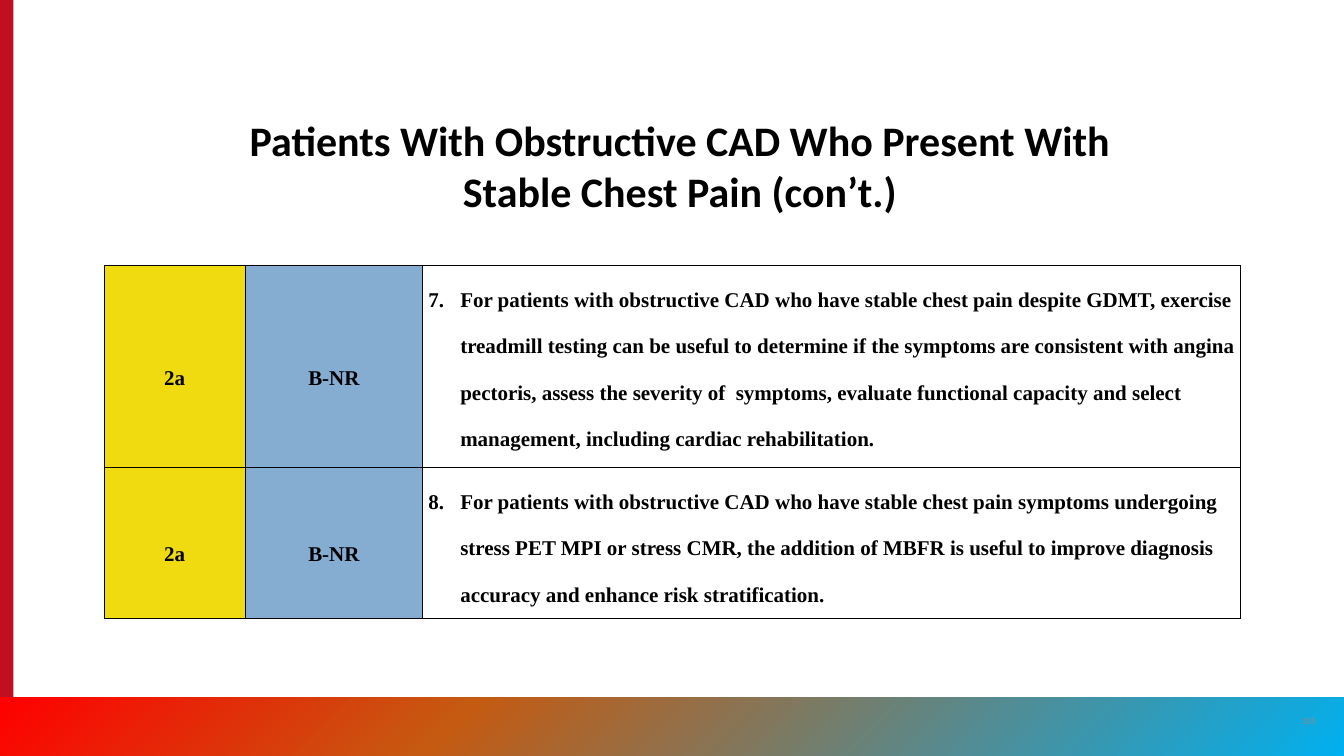
import copy

import pptx
import pptx.dml.color
import pptx.enum.shapes
import pptx.enum.text
import pptx.oxml
import pptx.oxml.ns
import pptx.util

COLS, ROWS = 16, 9
HUES = {
    "ink": "000000", "grey": "8A8B8A", "side": "C10E21",
    "class": "F0DA10", "level": "85ADD1",
    "sky": "00B0F0", "rust": "C55A11", "red": "FF0000",
}
FONTS = {
    "title": {"name": "Calibri", "size": pptx.util.Pt(36), "bold": True},
    "page": {"name": "Calibri", "size": pptx.util.Pt(8), "bold": False},
    "cell": {"name": "Times New Roman", "size": pptx.util.Pt(18), "bold": True},
}
ADVICE = [
    ("2a", "B-NR", 7, "For patients with obstructive CAD who have stable chest pain despite GDMT, "
     "exercise treadmill testing can be useful to determine if the symptoms are consistent with "
     "angina pectoris, assess the severity of  symptoms, evaluate functional capacity and select "
     "management, including cardiac rehabilitation."),
    ("2a", "B-NR", 8, "For patients with obstructive CAD who have stable chest pain symptoms "
     "undergoing stress PET MPI or stress CMR, the addition of MBFR is useful to improve "
     "diagnosis accuracy and enhance risk stratification."),
]


class Deck:
    """Draws styled elements on one slide laid out as a 16 by 9 grid."""

    def __init__(self):
        """Start a deck with one blank slide."""
        self.show = pptx.Presentation()
        self.show.slide_width = pptx.util.Inches(COLS)
        self.show.slide_height = pptx.util.Inches(ROWS)
        self.slide = self.show.slides.add_slide(self.show.slide_layouts[6])
        self.mid = pptx.enum.text.MSO_ANCHOR.MIDDLE

    def span(self, *units):
        """Turn grid units into lengths."""
        return [int(self.show.slide_width * unit / COLS) for unit in units]

    def hue(self, key):
        """Look up a named colour."""
        return pptx.dml.color.RGBColor.from_string(HUES[key])

    def style(self, item, values):
        """Set each attribute in a dict of values."""
        for key, value in values.items():
            setattr(item, key, value)

    def phrase(self, frame, words, font, hue="ink", center=True):
        """Put one styled paragraph in a text frame."""
        para = frame.paragraphs[0]
        run = para.add_run()
        run.text = words
        self.style(run.font, FONTS[font])
        run.font.color.rgb = self.hue(hue)
        if center:
            para.alignment = pptx.enum.text.PP_ALIGN.CENTER
        return para

    def text(self, box, words, font, hue="ink", **form):
        """Add a wrapped text box."""
        frame = self.slide.shapes.add_textbox(*self.span(*box)).text_frame
        self.style(frame, {"word_wrap": True, **form})
        self.phrase(frame, words, font, hue)

    def bar(self, box, *stops, turn=0):
        """Add a plain bar, or a gradient one when given several stops."""
        bar = self.slide.shapes.add_shape(
            pptx.enum.shapes.MSO_SHAPE.RECTANGLE, *self.span(*box))
        bar.shadow.inherit = False
        bar.line.fill.background()
        bar.rotation = turn
        if len(stops) == 1:
            bar.fill.solid()
            bar.fill.fore_color.rgb = self.hue(stops[0][1])
            return
        bar.fill.gradient()
        bar.fill.gradient_angle = 315
        holder = next(bar._element.iter(pptx.oxml.ns.qn("a:gsLst")))
        while len(holder) < len(stops):
            holder.append(copy.deepcopy(holder[0]))
        for stop, (place, key) in zip(bar.fill.gradient_stops, stops):
            stop.position = place
            stop.color.rgb = self.hue(key)

    def edge(self, cell):
        """Rule all four sides of a cell."""
        for side in "LRTB":
            cell._tc.get_or_add_tcPr().append(pptx.oxml.parse_xml(
                f'<a:ln{side} {pptx.oxml.ns.nsdecls("a")} w="12700"><a:solidFill>'
                f'<a:srgbClr val="{HUES["ink"]}"/></a:solidFill></a:ln{side}>'))

    def count(self, para, start):
        """Number a paragraph with a hanging indent."""
        props = para._p.get_or_add_pPr()
        hang = self.span(0.38)[0]
        props.set("marL", str(hang))
        props.set("indent", str(-hang))
        props.append(pptx.oxml.parse_xml(
            f'<a:buAutoNum {pptx.oxml.ns.nsdecls("a")} type="arabicPeriod" startAt="{start}"/>'))

    def cell(self, cell, words, fill=None, start=None):
        """Fill, rule and letter one table cell."""
        side = self.span(0.07)[0]
        self.style(cell, {"margin_left": side, "margin_right": side,
                          "margin_top": 0, "margin_bottom": 0})
        self.edge(cell)
        if fill:
            cell.fill.solid()
            cell.fill.fore_color.rgb = self.hue(fill)
            cell.vertical_anchor = self.mid
        else:
            cell.fill.background()
        para = self.phrase(cell.text_frame, words, "cell", center=start is None)
        para.line_spacing = 2.0
        if start is not None:
            self.count(para, start)

    def table(self, spot, wides, highs, rows):
        """Add the table of graded advice."""
        size = self.span(*spot, sum(wides), sum(highs))
        grid = self.slide.shapes.add_table(len(rows), len(wides), *size).table
        self.style(grid, {"first_row": False, "horz_banding": False})
        for col, wide in zip(grid.columns, self.span(*wides)):
            col.width = wide
        for row, high, (grade, level, start, words) in zip(grid.rows, self.span(*highs), rows):
            row.height = high
            first, second, third = row.cells
            self.cell(first, grade, "class")
            self.cell(second, level, "level")
            self.cell(third, words, start=start)


def main():
    """Build and save the slide."""
    deck = Deck()
    deck.bar((0, 0, 0.16, ROWS), (0, "side"))
    deck.bar((0, 8.3, COLS, 0.7), (0, "sky"), (0.66, "rust"), (1, "red"), turn=180)
    deck.text((15.34, 8.34, 0.48, 0.48), "105", "page", "grey", vertical_anchor=deck.mid)
    deck.table((1.24, 3.16), (1.68, 2.11, 9.74), (2.23, 1.65), ADVICE)
    deck.text((2.5, 1.32, 11.19, 1),
              "Patients With Obstructive CAD Who Present With Stable Chest Pain (con’t.)", "title")
    deck.show.save("out.pptx")


if __name__ == "__main__":
    main()
